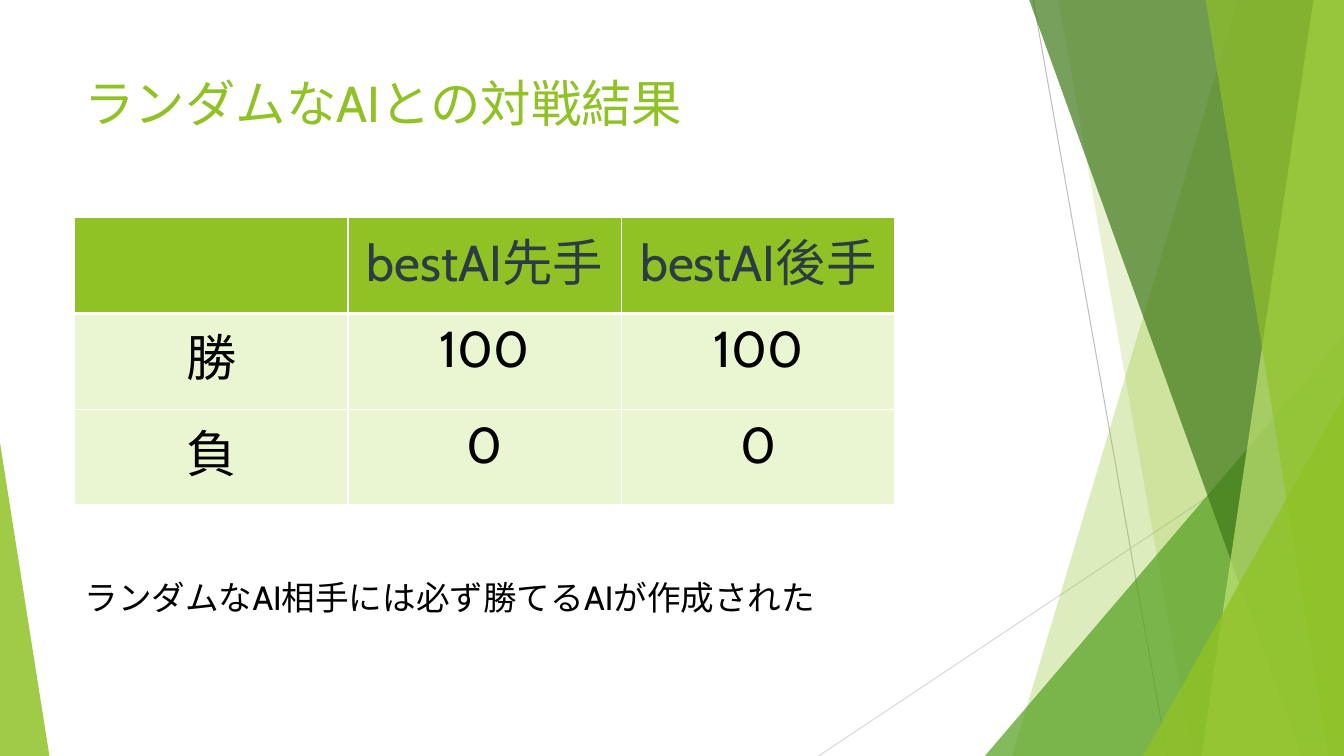
"""Build the slide that shows match results against a random AI."""
import pptx
import pptx.util
import pptx.dml.color
import pptx.enum.shapes
import pptx.enum.text
import pptx.oxml
import pptx.oxml.ns
import lxml.etree

LIME, GREEN, FOREST, PALE = "90C226", "54A021", "3F7819", "C0E474"
DRAWING = pptx.oxml.ns.nsdecls("a")

deck = pptx.Presentation()
deck.slide_width = pptx.util.Inches(13.333)
deck.slide_height = pptx.util.Inches(7.5)
page = deck.slides.add_slide(deck.slide_layouts[6])
column, row = deck.slide_width / 100, deck.slide_height / 100


def place(*lengths):
    """Turn alternating percentages of slide width and height into lengths."""
    return [round(length * (row if index % 2 else column)) for index, length in enumerate(lengths)]


def write(frame, text, size, hue, align="LEFT"):
    """Write one formatted paragraph into a text frame."""
    frame.word_wrap = True
    para = frame.paragraphs[0]
    para.alignment = pptx.enum.text.PP_ALIGN[align]
    span = para.add_run()
    span.text = text
    for name, value in {"name": "Cabin", "size": pptx.util.Pt(size), "bold": False}.items():
        setattr(span.font, name, value)
    span.font.color.rgb = pptx.dml.color.RGBColor.from_string(hue)


for ends, hue in [((76.88, 0, 86.85, 100), "BFBFBF"), ((100, 53.73, 60.9, 100), "D9D9D9")]:
    ray = page.shapes.add_connector(pptx.enum.shapes.MSO_CONNECTOR.STRAIGHT, *place(*ends))
    ray.line.width = pptx.util.Pt(0.75)
    ray.line.color.rgb = pptx.dml.color.RGBColor.from_string(hue)
    lxml.etree.SubElement(ray.line._get_or_add_ln().getparent(), pptx.oxml.ns.qn("a:effectLst"))

facets = [
    ("sheet", (92.1, 75.3), LIME, 30),
    ("sheet", (78.75, 88.73), LIME, 20),
    ("triangle", (73.28, 44.4, 26.72, 1), GREEN, 72),
    ("sheet", (76.58, 96.83), FOREST, 70),
    ("sheet", (97.73, 89.4), PALE, 70),
    ("sheet", (89.7, 98.85), LIME, 65),
    ("triangle", (85.05, 52.4, 14.95, 1), LIME, 80),
    ("triangle", (0, 58.53, 3.68, 0), LIME, 85),
]
for kind, measures, hue, opacity in facets:
    if kind == "sheet":
        upper, lower = measures
        outline = page.shapes.build_freeform(*place(upper, 0))
        outline.add_line_segments([place(*point) for point in [(100, 0), (100, 100), (lower, 100)]])
        facet = outline.convert_to_shape()
    else:
        left, top, width, apex = measures
        triangle = pptx.enum.shapes.MSO_SHAPE.ISOSCELES_TRIANGLE
        facet = page.shapes.add_shape(triangle, *place(left, top, width, 100 - top))
        facet.adjustments[0] = apex
    facet.shadow.inherit = False
    facet.line.fill.background()
    facet.fill.solid()
    facet.fill.fore_color.rgb = pptx.dml.color.RGBColor.from_string(hue)
    shade = facet.fill._xPr.find(".//" + pptx.oxml.ns.qn("a:srgbClr"))
    lxml.etree.SubElement(shade, pptx.oxml.ns.qn("a:alpha"), val=str(opacity * 1000))

captions = [
    ((5.55, 8.93, 70.5, 19.2), "ランダムなAIとの対戦結果", 36, LIME),
    ((5.55, 75.6, 62.1, 6.67), "ランダムなAI相手には必ず勝てるAIが作成された", 24, "000000"),
]
for bounds, text, size, hue in captions:
    box = page.shapes.add_textbox(*place(*bounds))
    write(box.text_frame, text, size, hue)

results = [["", "bestAI先手", "bestAI後手"], ["勝", "100", "100"], ["負", "0", "0"]]
table = page.shapes.add_table(3, 3, *place(5.55, 28.8, 61.05, 38)).table
for line, entries in enumerate(results):
    ink, ground = ("000000", "EAF6D1") if line else ("2C3C43", LIME)
    for position, entry in enumerate(entries):
        cell = table.cell(line, position)
        cell.fill.solid()
        cell.fill.fore_color.rgb = pptx.dml.color.RGBColor.from_string(ground)
        if entry:
            write(cell.text_frame, entry, 36, ink, "CENTER")
        weights = {"L": 1, "R": 1, "T": 3 if line == 1 else 1, "B": 1 if line else 3}
        for order, (side, weight) in enumerate(weights.items()):
            border = pptx.oxml.parse_xml(
                f'<a:ln{side} {DRAWING} w="{pptx.util.Pt(weight)}"><a:solidFill>'
                f'<a:srgbClr val="FFFFFF"/></a:solidFill></a:ln{side}>')
            cell._tc.get_or_add_tcPr().insert(order, border)

deck.save("out.pptx")
